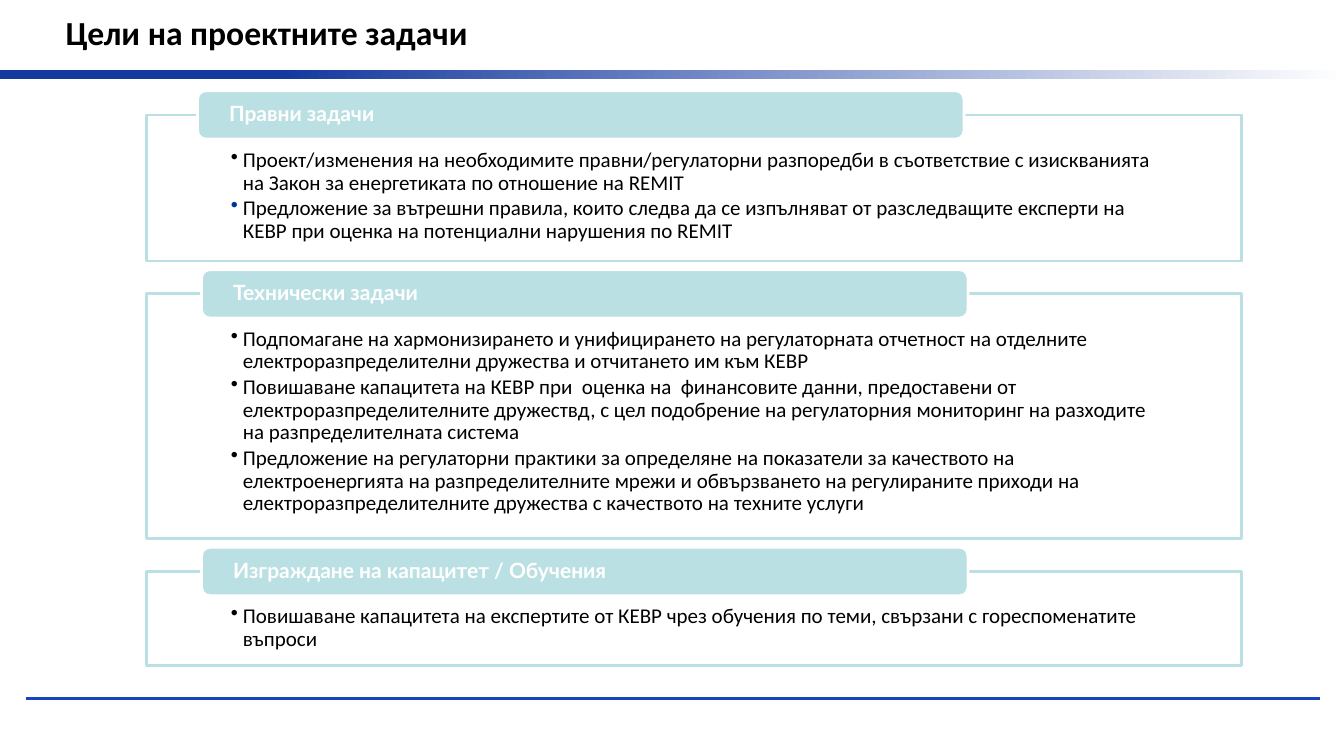
from lxml.etree import SubElement
from pptx import Presentation
from pptx.dml.color import RGBColor
from pptx.enum.shapes import MSO_CONNECTOR as Connector, MSO_SHAPE as Shape
from pptx.enum.text import MSO_ANCHOR as Anchor, PP_ALIGN as Align
from pptx.oxml.ns import qn
from pptx.util import Inches, Pt

BLACK = RGBColor(0x00, 0x00, 0x00)
WHITE = RGBColor(0xFF, 0xFF, 0xFF)
AQUA = RGBColor(0xBB, 0xE0, 0xE3)
NAVY = RGBColor(0x15, 0x39, 0x9F)
RULE_BLUE = RGBColor(0x19, 0x44, 0xBD)
BULLET_BLUE = RGBColor(0x00, 0x33, 0x99)

COLUMNS, ROWS = 40, 30
BOX_LEFT, BOX_WIDTH = 4.35, 32.59
FIRST_TOP, GAP = 4.56, 1.3
TAB_WIDTH, TAB_HEIGHT = 22.81, 1.92

# Heading, tab column, box rows, tasks with their bullet colours
SECTIONS = [
    ("Правни задачи", 5.88, 5.8, [
        ("Проект/изменения на необходимите правни/регулаторни разпоредби в съответствие "
         "с изискванията на Закон за енергетиката по отношение на REMIT", BLACK),
        ("Предложение за вътрешни правила, които следва да се изпълняват от разследващите "
         "експерти на КЕВР при оценка на потенциални нарушения по REMIT", BULLET_BLUE),
    ]),
    ("Технически задачи", 6, 9.72, [
        ("Подпомагане на хармонизирането и унифицирането на регулаторната отчетност на "
         "отделните електроразпределителни дружества и отчитането им към КЕВР", BLACK),
        ("Повишаване капацитета на КЕВР при  оценка на  финансовите данни, предоставени от "
         "електроразпределителните дружествд, с цел подобрение на регулаторния мониторинг "
         "на разходите на разпределителната система", BLACK),
        ("Предложение на регулаторни практики за определяне на показатели за качеството на "
         "електроенергията на разпределителните мрежи и обвързването на регулираните приходи "
         "на електроразпределителните дружества с качеството на техните услуги", BLACK),
    ]),
    ("Изграждане на капацитет / Обучения", 6, 3.72, [
        ("Повишаване капацитета на експертите от КЕВР чрез обучения по теми, свързани с "
         "гореспоменатите въпроси", BLACK),
    ]),
]


class SlideBuilder:
    def __init__(self, presentation):
        self.column = presentation.slide_width / COLUMNS
        self.row = presentation.slide_height / ROWS
        self.slide = presentation.slides.add_slide(presentation.slide_layouts[5])

    def x(self, columns):
        return round(columns * self.column)

    def y(self, rows):
        return round(rows * self.row)

    def place(self, left, top, width, height):
        return self.x(left), self.y(top), self.x(width), self.y(height)

    def add_text(self, paragraph, text, size, color, font="Calibri", bold=False):
        paragraph.alignment = Align.LEFT
        run = paragraph.add_run()
        run.text = text
        run.font.name, run.font.size, run.font.bold = font, Pt(size), bold
        run.font.color.rgb = color

    def title(self, text, *grid):
        title = self.slide.shapes.title
        title.left, title.top, title.width, title.height = self.place(*grid)
        title.text_frame.vertical_anchor = Anchor.MIDDLE
        paragraph = title.text_frame.paragraphs[0]
        paragraph.line_spacing = Pt(20)
        self.add_text(paragraph, text, 24, BLACK, bold=True)

    def rule(self, left, right, top):
        y = self.y(top)
        line = self.slide.shapes.add_connector(
            Connector.STRAIGHT, self.x(left), y, self.x(right), y)
        line.line.color.rgb, line.line.width = RULE_BLUE, Pt(2.25)
        SubElement(line._element.spPr, qn("a:effectLst"))

    def gradient_band(self, *grid):
        band = self.slide.shapes.add_shape(Shape.RECTANGLE, *self.place(*grid))
        band.shadow.inherit = False
        band.line.fill.background()
        band.fill.gradient()
        band.fill.gradient_angle = 0
        stops = zip(band.fill.gradient_stops, (NAVY, WHITE), (0.21, 1))
        for stop, color, position in stops:
            stop.color.rgb, stop.position = color, position

    def panel(self, kind, fill, outline, grid, insets, anchor):
        """Add a filled, outlined shape and return its text frame."""
        shape = self.slide.shapes.add_shape(kind, *self.place(*grid))
        shape.shadow.inherit = False
        shape.fill.solid()
        shape.fill.fore_color.rgb = fill
        shape.line.color.rgb, shape.line.width = outline, Pt(2)
        frame = shape.text_frame
        frame.word_wrap, frame.vertical_anchor = True, anchor
        side, top, bottom = insets
        frame.margin_left = frame.margin_right = self.x(side)
        frame.margin_top, frame.margin_bottom = self.y(top), self.y(bottom)
        return frame

    def bullet(self, paragraph, color):
        paragraph.level = 1
        properties = paragraph._p.get_or_add_pPr()
        properties.set("marL", str(Inches(0.12)))
        properties.set("indent", str(-Inches(0.12)))
        bullet_color = SubElement(properties, qn("a:buClr"))
        SubElement(bullet_color, qn("a:srgbClr"), val=str(color))
        SubElement(properties, qn("a:buChar"), char="•")

    def task_box(self, tasks, top, height):
        frame = self.panel(Shape.RECTANGLE, WHITE, AQUA, (BOX_LEFT, top, BOX_WIDTH, height),
                           (2.52, 1.36, 0.48), Anchor.TOP)
        for index, (text, color) in enumerate(tasks):
            paragraph = frame.add_paragraph() if index else frame.paragraphs[0]
            self.bullet(paragraph, color)
            paragraph.line_spacing, paragraph.space_after = 0.9, Pt(2)
            self.add_text(paragraph, text, 15, BLACK)

    def heading_tab(self, text, left, border):
        grid = (left, border - TAB_HEIGHT / 2, TAB_WIDTH, TAB_HEIGHT)
        frame = self.panel(Shape.ROUNDED_RECTANGLE, AQUA, WHITE, grid,
                           (0.87, 0, 0), Anchor.MIDDLE)
        paragraph = frame.paragraphs[0]
        paragraph.line_spacing = 0.9
        self.add_text(paragraph, text, 15, WHITE, "Lato", bold=True)


def main():
    presentation = Presentation()
    presentation.slide_width, presentation.slide_height = Inches(13.33), Inches(7.5)
    builder = SlideBuilder(presentation)

    # Frame of the slide
    builder.rule(0.78, 39.28, 27.72)
    builder.gradient_band(0, 2.76, COLUMNS, 0.36)
    builder.title("Цели на проектните задачи", 1.65, 0.72, 29.1, 1.6)

    # Task boxes, each with a heading tab centred on its upper border
    top = FIRST_TOP
    for heading, tab_left, height, tasks in SECTIONS:
        builder.task_box(tasks, top, height)
        builder.heading_tab(heading, tab_left, top)
        top += height + GAP

    presentation.save("out.pptx")


if __name__ == "__main__":
    main()
